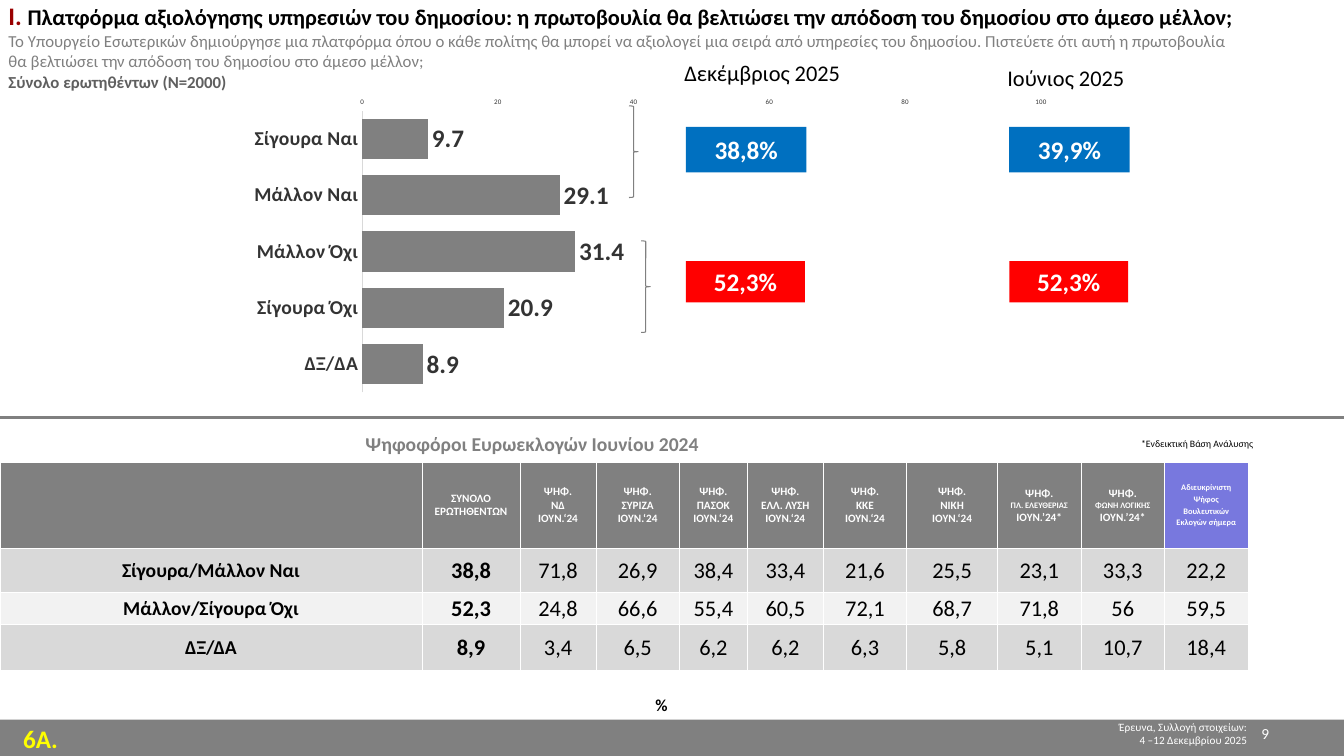
from lxml.etree import SubElement
from pptx import Presentation
from pptx.chart.data import CategoryChartData
from pptx.dml.color import RGBColor
from pptx.enum.chart import XL_CHART_TYPE, XL_LABEL_POSITION, XL_TICK_MARK
from pptx.enum.shapes import MSO_CONNECTOR, MSO_SHAPE
from pptx.enum.text import MSO_ANCHOR, PP_ALIGN
from pptx.oxml import parse_xml
from pptx.oxml.ns import nsdecls, qn
from pptx.util import Pt

COLORS = {
    "white": "FFFFFF", "black": "000000", "gray": "808080", "dark": "333333",
    "base": "5F5F5F", "axis": "D9D9D9", "odd": "D9D9D9", "even": "F2F2F2",
    "yes": "0070C0", "no": "FF0000", "undecided": "7878DE",
    "numeral": "990000", "yellow": "FFFF00",
}
FONT = "Calibri"
LEFT, CENTER, RIGHT = PP_ALIGN.LEFT, PP_ALIGN.CENTER, PP_ALIGN.RIGHT


def color(name):
    return RGBColor.from_string(COLORS[name])


def style_font(font, size, tone, bold=False):
    font.name = FONT
    font.size = Pt(size)
    font.bold = bold
    font.color.rgb = color(tone)


def write(frame, text, size=12, tone="black", bold=False, align=LEFT,
          hanging=0, before=0, join=False):
    para = frame.paragraphs[-1]
    if para.runs and not join:
        para = frame.add_paragraph()
        para.space_before = Pt(before)
    para.alignment = align
    if hanging:
        properties = para._p.get_or_add_pPr()
        properties.set("marL", str(Pt(hanging)))
        properties.set("indent", str(-Pt(hanging)))
    span = para.add_run()
    span.text = text
    style_font(span.font, size, tone, bold)


class SlideBuilder:
    def __init__(self, page):
        self.shapes = page.shapes

    def text(self, area, *lines, wrap=True, **style):
        frame = self.shapes.add_textbox(*map(Pt, area)).text_frame
        frame.word_wrap = wrap
        for line in lines:
            write(frame, line, **style)

    def box(self, area, fill, kind=MSO_SHAPE.RECTANGLE):
        box = self.shapes.add_shape(kind, *map(Pt, area))
        box.shadow.inherit = False
        box.fill.solid()
        box.fill.fore_color.rgb = color(fill)
        box.line.fill.background()
        return box

    def result(self, area, fill, text):
        frame = self.box(area, fill).text_frame
        frame.word_wrap = False
        frame.vertical_anchor = MSO_ANCHOR.MIDDLE
        write(frame, text, size=18, tone="white", bold=True, align=CENTER)

    def brace(self, area):
        brace = self.box(area, "white", MSO_SHAPE.RIGHT_BRACE)
        brace.fill.background()
        brace.line.color.rgb = color("gray")
        brace.line.width = Pt(0.75)

    def line(self, left, top, right, bottom, width):
        line = self.shapes.add_connector(
            MSO_CONNECTOR.STRAIGHT, Pt(left), Pt(top), Pt(right), Pt(bottom))
        line.line.color.rgb = color("gray")
        line.line.width = Pt(width)
        SubElement(line._element.spPr, qn("a:effectLst"))

    def bars(self, area, answers, plot):
        data = CategoryChartData()
        data.categories = answers.keys()
        data.add_series("Series 1", answers.values())
        chart = self.shapes.add_chart(
            XL_CHART_TYPE.BAR_CLUSTERED, *map(Pt, area), data).chart
        style_font(chart.font, 14, "black", True)
        chart.has_legend = False
        chart.has_title = False
        bars = chart.plots[0]
        bars.gap_width = 40
        bars.overlap = -51
        bars.vary_by_categories = False
        series = bars.series[0]
        series.format.fill.solid()
        series.format.fill.fore_color.rgb = color("gray")
        labels = series.data_labels
        labels.show_value = True
        labels.position = XL_LABEL_POSITION.OUTSIDE_END
        style_font(labels.font, 18, "dark", True)
        names, scale = chart.category_axis, chart.value_axis
        names.reverse_order = True
        names.format.line.color.rgb = color("axis")
        names.format.line.width = Pt(0.75)
        style_font(names.tick_labels.font, 14, "dark", True)
        scale.minimum_scale, scale.maximum_scale, scale.major_unit = 0, 100, 20
        scale.has_major_gridlines = False
        scale.format.line.fill.background()
        style_font(scale.tick_labels.font, 5, "dark")
        for axis in (names, scale):
            axis.major_tick_mark = XL_TICK_MARK.NONE
        sides = "".join(f'<c:{side}Mode val="edge"/>' for side in "xy")
        sizes = "".join(f'<c:{key} val="{value}"/>' for key, value in zip("xywh", plot))
        plot_area = chart._chartSpace.chart.plotArea
        for layout in plot_area.findall(qn("c:layout")):
            plot_area.remove(layout)
        plot_area.insert(0, parse_xml(
            f'<c:layout {nsdecls("c")}><c:manualLayout><c:layoutTarget val="inner"/>'
            f'{sides}{sizes}</c:manualLayout></c:layout>'))

    def cell(self, cell, fill, margins):
        cell.vertical_anchor = MSO_ANCHOR.MIDDLE
        (cell.margin_left, cell.margin_top,
         cell.margin_right, cell.margin_bottom) = map(Pt, margins)
        properties = cell._tc.get_or_add_tcPr()
        for side in ("lnL", "lnR", "lnT", "lnB"):
            properties.append(parse_xml(
                f'<a:{side} {nsdecls("a")} w="{Pt(0.5)}"><a:solidFill>'
                f'<a:srgbClr val="{COLORS["white"]}"/></a:solidFill></a:{side}>'))
        cell.fill.solid()
        cell.fill.fore_color.rgb = color(fill)
        return cell.text_frame

    def table(self, left, top, widths, heights, headers, rows):
        table = self.shapes.add_table(
            len(heights), len(widths), Pt(left), Pt(top),
            Pt(sum(widths)), Pt(sum(heights))).table
        table.first_row = table.horz_banding = False
        for column, width in zip(table.columns, widths):
            column.width = Pt(width)
        for row, height in zip(table.rows, heights):
            row.height = Pt(height)
        last = len(headers) - 1
        for index, lines in enumerate(headers):
            fill = "undecided" if index == last else "gray"
            frame = self.cell(table.cell(0, index), fill, (7.2, 3.6, 7.2, 3.6))
            for line in lines:
                small = index == last or line in SMALL_PARTIES
                write(frame, line, size=6 if small else 8, tone="white", bold=True,
                      align=CENTER, before=1.2 if index == last else 0)
        for number, values in enumerate(rows, 1):
            fill = "odd" if number % 2 else "even"
            for index, value in enumerate(values):
                frame = self.cell(table.cell(number, index), fill, (0.7, 0.7, 0.7, 0))
                write(frame, value, size=16 if index else 14, bold=index < 2, align=CENTER)


ANSWERS = {"Σίγουρα Ναι": 9.7, "Μάλλον Ναι": 29.1, "Μάλλον Όχι": 31.4,
           "Σίγουρα Όχι": 20.9, "ΔΞ/ΔΑ": 8.9}
PARTIES = ["NΔ", "ΣΥΡΙΖΑ", "ΠΑΣΟΚ", "ΕΛΛ. ΛΥΣΗ", "ΚΚΕ", "ΝΙΚΗ"]
SMALL_PARTIES = ["ΠΛ. ΕΛΕΥΘΕΡΙΑΣ", "ΦΩΝΗ ΛΟΓΙΚΗΣ"]
HEADERS = [
    [], ["ΣΥΝΟΛΟ", "ΕΡΩΤΗΘΕΝΤΩΝ"],
    *(["ΨΗΦ.", party, "ΙΟΥΝ.‘24"] for party in PARTIES),
    *(["ΨΗΦ.", party, "ΙΟΥΝ.’24*"] for party in SMALL_PARTIES),
    ["Αδιευκρίνιστη", "Ψήφος", "Βουλευτικών", "Εκλογών σήμερα"],
]
ROWS = [
    ["Σίγουρα/Μάλλον Ναι", *"38,8 71,8 26,9 38,4 33,4 21,6 25,5 23,1 33,3 22,2".split()],
    ["Μάλλον/Σίγουρα Όχι", *"52,3 24,8 66,6 55,4 60,5 72,1 68,7 71,8 56 59,5".split()],
    ["ΔΞ/ΔΑ", *"8,9 3,4 6,5 6,2 6,2 6,3 5,8 5,1 10,7 18,4".split()],
]
WIDTHS = [301.5, 70, 54.3, 59.5, 48.6, 54.3, 59.5, 65, 59.5, 59.7, 59.5]


def main():
    deck = Presentation()
    deck.slide_width, deck.slide_height = Pt(960), Pt(540)
    slide = SlideBuilder(deck.slides.add_slide(deck.slide_layouts[6]))

    slide.box((0, 514, 960, 26), "gray")
    slide.text((690, 511, 208, 27), "Έρευνα, Συλλογή στοιχείων:", "4 –12 Δεκεμβρίου 2025",
               size=8, tone="white", align=RIGHT)
    slide.text((9.4, 513.4, 48, 26), "6Α.", size=18, tone="yellow", bold=True)
    slide.text((894, 514, 41, 26), "9", size=11, tone="white")

    heading = slide.box((-1, -3, 894, 73), "white").text_frame
    heading.word_wrap = True
    heading.vertical_anchor = MSO_ANCHOR.TOP
    write(heading, "Ι. ", size=18, tone="numeral", bold=True, hanging=27)
    write(heading, "Πλατφόρμα αξιολόγησης υπηρεσιών του δημοσίου: η πρωτοβουλία θα βελτιώσει "
          "την απόδοση του δημοσίου στο άμεσο μέλλον;", size=16, bold=True, join=True)
    for line in ("Το Υπουργείο Εσωτερικών δημιούργησε μια πλατφόρμα όπου ο κάθε πολίτης θα μπορεί "
                 "να αξιολογεί μια σειρά από υπηρεσίες του δημοσίου. Πιστεύετε ότι αυτή η "
                 "πρωτοβουλία", "θα βελτιώσει την απόδοση του δημοσίου στο άμεσο μέλλον;"):
        write(heading, line, tone="gray", hanging=27)
    write(heading, "Σύνολο ερωτηθέντων (Ν=2000)", tone="base", bold=True)

    slide.bars((139.7, 49, 633, 255), ANSWERS, (0.188, 0.118, 0.766, 0.789))
    for left, top in ((449.3, 75.6), (458, 172)):
        slide.brace((left, top, 6.5, 65.5))
    for left, month, top, yes in ((490, "Δεκέμβριος 2025", 39, "38,8%"),
                                  (720.9, "Ιούνιος 2025", 42.5, "39,9%")):
        slide.text((left - 45 if top < 40 else left - 59, top, 199, 27), month,
                   size=16, align=CENTER)
        slide.result((left, 90.7, 86, 32.4), "yes", yes)
        slide.result((left, 186.5, 85, 29.5), "no", "52,3%")

    slide.line(0, 298, 960, 298, 2.25)
    slide.text((254, 305.3, 435, 24.5), "Ψηφοφόροι Ευρωεκλογών Ιουνίου 2024",
               size=14, tone="gray", bold=True)
    slide.text((808, 309, 104, 16), "*Ενδεικτική Βάση Ανάλυσης", size=7, wrap=False)
    slide.table(0, 330, WIDTHS, [61.7, 31.2, 23, 33.2], HEADERS, ROWS)
    slide.text((461, 492.5, 23, 21.6), "%", bold=True, wrap=False)
    deck.save("out.pptx")


if __name__ == "__main__":
    main()
